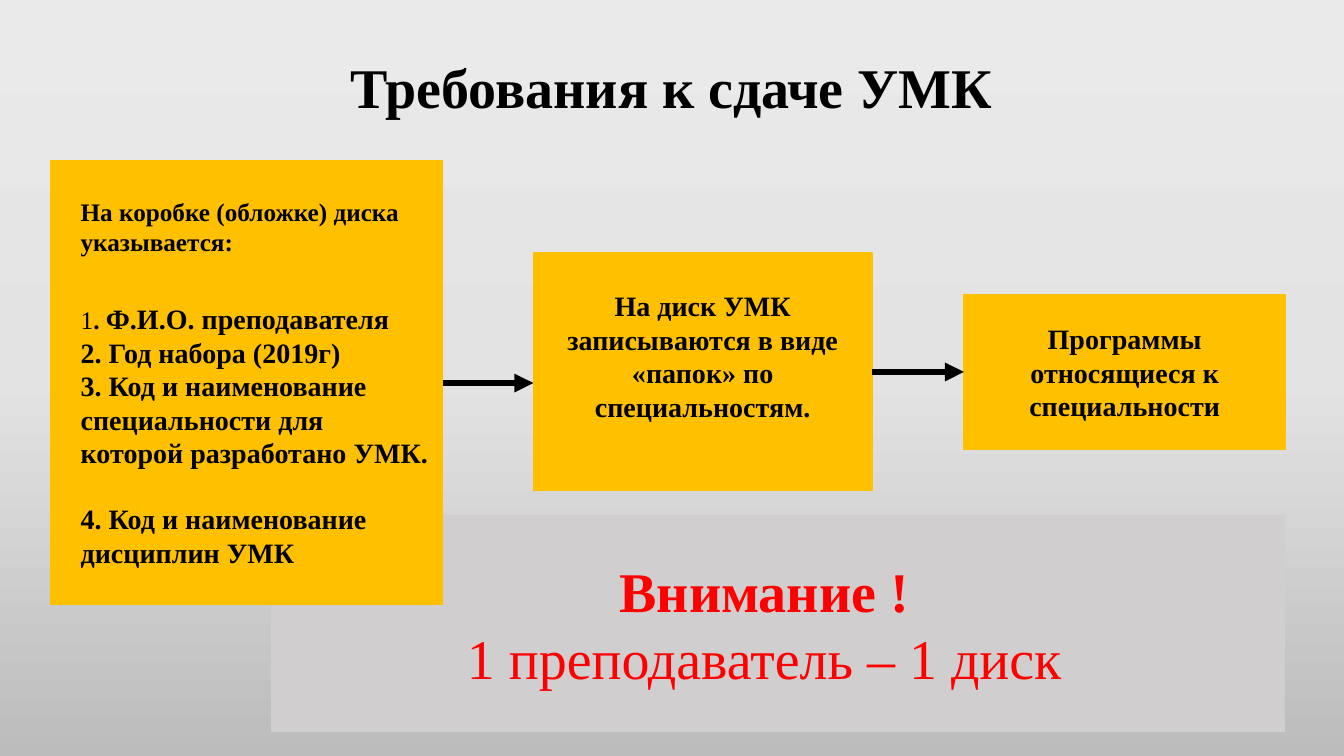
from copy import deepcopy

from pptx import Presentation
from pptx.dml.color import RGBColor
from pptx.enum.shapes import MSO_CONNECTOR as Connector, MSO_SHAPE as Shape
from pptx.enum.text import MSO_ANCHOR as Anchor, PP_ALIGN as Align
from pptx.oxml.ns import qn
from pptx.oxml.xmlchemy import OxmlElement
from pptx.util import Inches, Pt

BLACK = RGBColor(0x00, 0x00, 0x00)
RED = RGBColor(0xFF, 0x00, 0x00)
AMBER = RGBColor(0xFF, 0xC0, 0x00)
GREY = RGBColor(0xD0, 0xCE, 0xCE)
BACKDROP = [RGBColor(0xEB, 0xEA, 0xEA), RGBColor(0xE4, 0xE3, 0xE3), RGBColor(0xBD, 0xBC, 0xBC)]


class SlideBuilder:
    """Holds the text style and the current slide."""

    font = "Times New Roman"

    def __init__(self, page):
        self.page = page

    def backdrop(self, colors):
        fill = self.page.background.fill
        fill.gradient()
        fill.gradient_angle = 270
        stops = next(self.page.element.iter(qn("a:gsLst")))
        stops.insert(1, deepcopy(stops[0]))
        for index, (stop, color) in enumerate(zip(fill.gradient_stops, colors)):
            stop.position = index / (len(colors) - 1)
            stop.color.rgb = color

    def style(self, span, size, color=BLACK, bold=True):
        span.font.name = self.font
        span.font.size = Pt(size)
        span.font.bold = bold
        span.font.color.rgb = color

    def title(self, text, left, top, width, height):
        title = self.page.shapes.title
        title.left, title.top = Inches(left), Inches(top)
        title.width, title.height = Inches(width), Inches(height)
        frame = title.text_frame
        frame.text = text
        frame.vertical_anchor = Anchor.MIDDLE
        para = frame.paragraphs[0]
        para.alignment = Align.CENTER
        para.line_spacing = 0.9
        self.style(para.runs[0], 40)

    def box(self, left, top, width, height, text, size=20, fill=AMBER, color=BLACK, align=Align.CENTER):
        box = self.page.shapes.add_shape(
            Shape.RECTANGLE, Inches(left), Inches(top), Inches(width), Inches(height))
        box.shadow.inherit = False
        box.fill.solid()
        box.fill.fore_color.rgb = fill
        box.line.color.rgb = fill
        box.line.width = Pt(1)
        frame = box.text_frame
        frame.text = text
        frame.word_wrap = True
        frame.vertical_anchor = Anchor.MIDDLE
        for para in frame.paragraphs:
            para.alignment = align
            for span in para.runs:
                self.style(span, size, color)
        return frame

    def arrow(self, left, right, height):
        arrow = self.page.shapes.add_connector(
            Connector.STRAIGHT, Inches(left), Inches(height), Inches(right), Inches(height))
        arrow.line.color.rgb = BLACK
        arrow.line.width = Pt(4.5)
        head = OxmlElement("a:tailEnd")
        head.set("type", "triangle")
        arrow.line._get_or_add_ln().append(head)
        arrow._element.spPr.append(OxmlElement("a:effectLst"))


def main():
    deck = Presentation()
    deck.slide_width, deck.slide_height = Inches(13.33), Inches(7.5)
    slide = SlideBuilder(deck.slides.add_slide(deck.slide_layouts[5]))
    slide.backdrop(BACKDROP)
    slide.title("Требования к сдаче УМК", 0.9, 0.42, 11.52, 0.95)

    notice = slide.box(2.7, 5.12, 10.04, 2.14, "Внимание !\n1 преподаватель – 1 диск", 40, GREY, RED)
    warning, rule = notice.paragraphs
    warning._p.get_or_add_pPr().set("marR", str(Inches(0.28)))
    rule.runs[0].font.bold = False

    cover = slide.box(
        0.5, 1.59, 3.89, 4.41,
        "На коробке (обложке) диска указывается:\n"
        "1\n"
        "2. Год набора (2019г)\n"
        "3. Код и наименование специальности для которой разработано УМК.\n"
        "4. Код и наименование дисциплин УМК",
        align=Align.LEFT)
    cover.margin_left = Inches(0.3)
    heading, author, _, _, subjects = cover.paragraphs
    slide.style(heading.runs[0], 18)
    slide.style(author.runs[0], 18, bold=False)
    for text, size in ((". ", 18), ("Ф.И.О. преподавателя", 20)):
        span = author.add_run()
        span.text = text
        slide.style(span, size)
    author.space_before = Pt(32)
    subjects.space_before = Pt(23)

    folders = slide.box(5.29, 2.51, 3.36, 2.36, "На диск УМК записываются в виде «папок» по специальностям.")
    folders.margin_bottom = Inches(0.37)
    slide.box(9.56, 2.92, 3.19, 1.54, "Программы относящиеся к специальности")

    slide.arrow(4.39, 5.29, 3.8)
    slide.arrow(8.65, 9.56, 3.69)
    deck.save("out.pptx")


if __name__ == "__main__":
    main()
